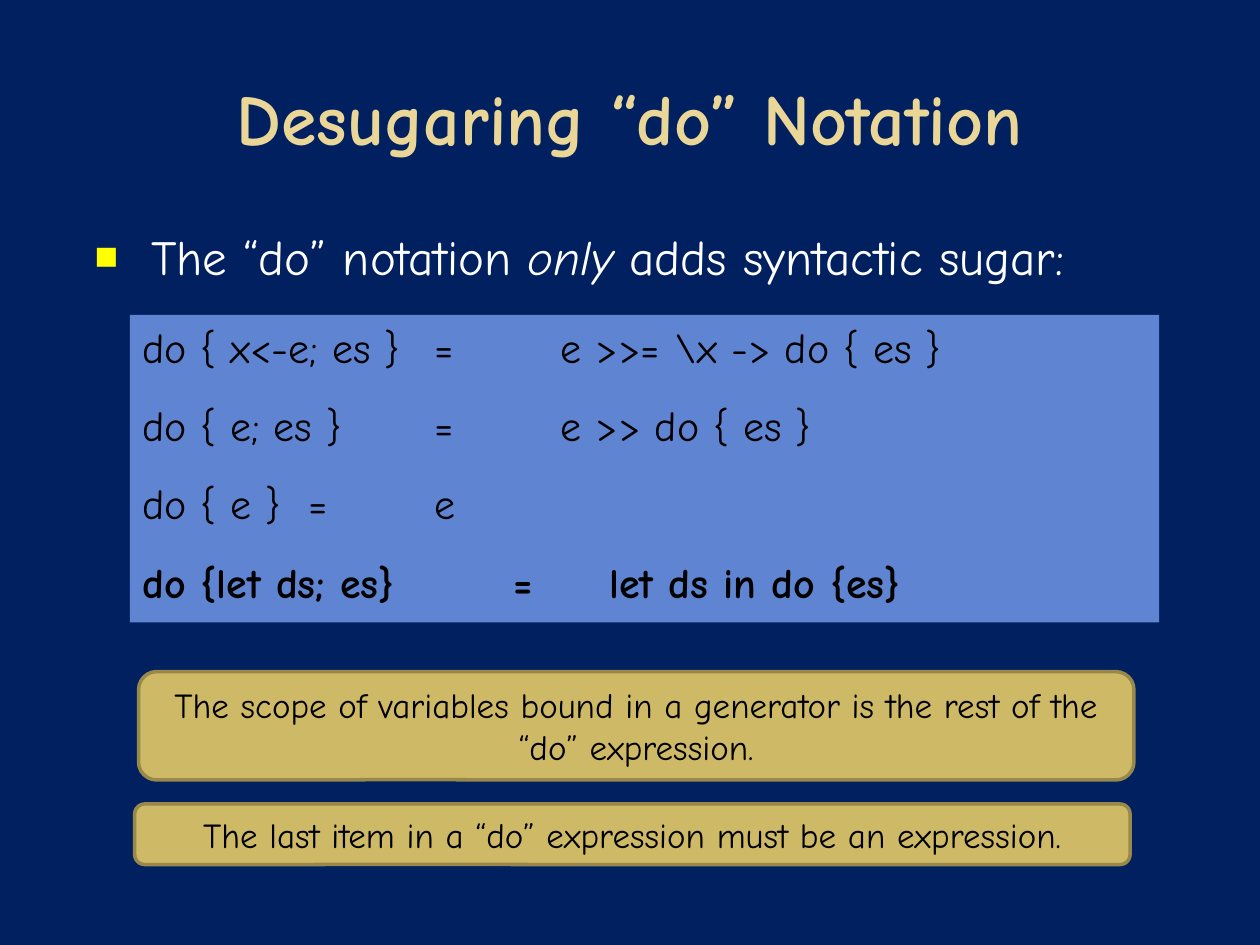
from lxml.etree import SubElement
from pptx import Presentation
from pptx.dml.color import RGBColor
from pptx.enum.shapes import MSO_SHAPE as Preset
from pptx.enum.text import MSO_ANCHOR as Anchor, MSO_AUTO_SIZE as AutoSize, PP_ALIGN as Align
from pptx.oxml.ns import qn
from pptx.util import Pt

FONT = "Comic Neue"
NAVY, WHITE, BLACK, YELLOW = "002060", "FFFFFF", "000000", "FFFF00"
CREAM, BLUE, GOLD, BRONZE = "EAD696", "5F84D2", "CEB966", "98894B"

# Each rule: text, tab stops in points, bold
RULES = [
    ("do { x<-e; es } \t=\te >>= \\x -> do { es }", (167, 239), False),
    ("do { e; es }\t=\te >> do { es }", (167, 239), False),
    ("do { e }\t=\te", (95, 167), False),
    ("do {let ds; es}\t=\tlet ds in do {es}", (212, 267), True),
]
NOTES = [
    ("The scope of variables bound in a generator is the rest of the “do” expression.",
     (79.2, 383.8, 568.8, 61.9)),
    ("The last item in a “do” expression must be an expression.",
     (77, 459.4, 568.8, 34.6)),
]


def color(value):
    return RGBColor.from_string(value)


def add_span(para, text, size, shade, bold=False, italic=False):
    span = para.add_run()
    span.text = text
    font = span.font
    font.name, font.size, font.bold, font.italic = FONT, Pt(size), bold, italic
    font.color.rgb = color(shade)


def place(shape, box):
    shape.left, shape.top, shape.width, shape.height = map(Pt, box)


def set_frame(shape, anchor):
    frame = shape.text_frame
    frame.word_wrap = True
    frame.auto_size = AutoSize.NONE
    frame.vertical_anchor = anchor
    return frame


def add_panel(page, preset, box, fill):
    panel = page.shapes.add_shape(preset, *map(Pt, box))
    panel.shadow.inherit = False
    panel.fill.solid()
    panel.fill.fore_color.rgb = color(fill)
    return panel


def set_bullet(para, char, shade, indent, hanging):
    props = para._p.get_or_add_pPr()
    props.set("marL", str(Pt(indent)))
    props.set("indent", str(-Pt(hanging)))
    SubElement(SubElement(props, qn("a:buClr")), qn("a:srgbClr"), val=shade)
    SubElement(props, qn("a:buSzPct"), val="80000")
    SubElement(props, qn("a:buFont"), typeface="Arial")
    SubElement(props, qn("a:buChar"), char=char)


def set_tabs(para, stops):
    tabs = SubElement(para._p.get_or_add_pPr(), qn("a:tabLst"))
    for stop in stops:
        SubElement(tabs, qn("a:tab"), pos=str(Pt(stop)), algn="l")


def fill_title(page, box):
    title = page.shapes.title
    place(title, box)
    para = set_frame(title, Anchor.MIDDLE).paragraphs[0]
    para.alignment = Align.CENTER
    add_span(para, "Desugaring “do” Notation", 41, CREAM, bold=True)


def fill_body(page, box):
    body = page.placeholders[1]
    place(body, box)
    para = set_frame(body, Anchor.TOP).paragraphs[0]
    para.space_before = Pt(0)
    set_bullet(para, "■", YELLOW, 43.2, 32.4)
    for text, italic in (("The “do” notation ", False), ("only ", True),
                         ("adds syntactic sugar:", False)):
        add_span(para, text, 28, WHITE, italic=italic)


def add_rules(page, box):
    panel = add_panel(page, Preset.RECTANGLE, box, BLUE)
    panel.line.fill.background()
    frame = set_frame(panel, Anchor.TOP)
    for index, (text, stops, bold) in enumerate(RULES):
        para = frame.add_paragraph() if index else frame.paragraphs[0]
        para.alignment = Align.LEFT
        para.space_before = Pt(16 if index else 0)
        set_tabs(para, stops)
        add_span(para, text, 24, BLACK, bold=bold)


def add_note(page, text, box):
    note = add_panel(page, Preset.ROUNDED_RECTANGULAR_CALLOUT, box, GOLD)
    for index, value in enumerate((-0.237, 0.497, 0.167)):
        note.adjustments[index] = round(value, 3)
    note.line.color.rgb = color(BRONZE)
    note.line.width = Pt(2)
    para = set_frame(note, Anchor.MIDDLE).paragraphs[0]
    para.alignment = Align.CENTER
    add_span(para, text, 20, BLACK)


def main():
    deck = Presentation()
    deck.slide_width, deck.slide_height = Pt(720), Pt(540)
    page = deck.slides.add_slide(deck.slide_layouts[1])
    page.background.fill.solid()
    page.background.fill.fore_color.rgb = color(NAVY)

    fill_title(page, (36, 21.6, 648, 90))
    fill_body(page, (36, 126, 648, 370.8))
    add_rules(page, (74.2, 180, 588.2, 175.7))
    for text, box in NOTES:
        add_note(page, text, box)
    deck.save("out.pptx")


if __name__ == "__main__":
    main()
